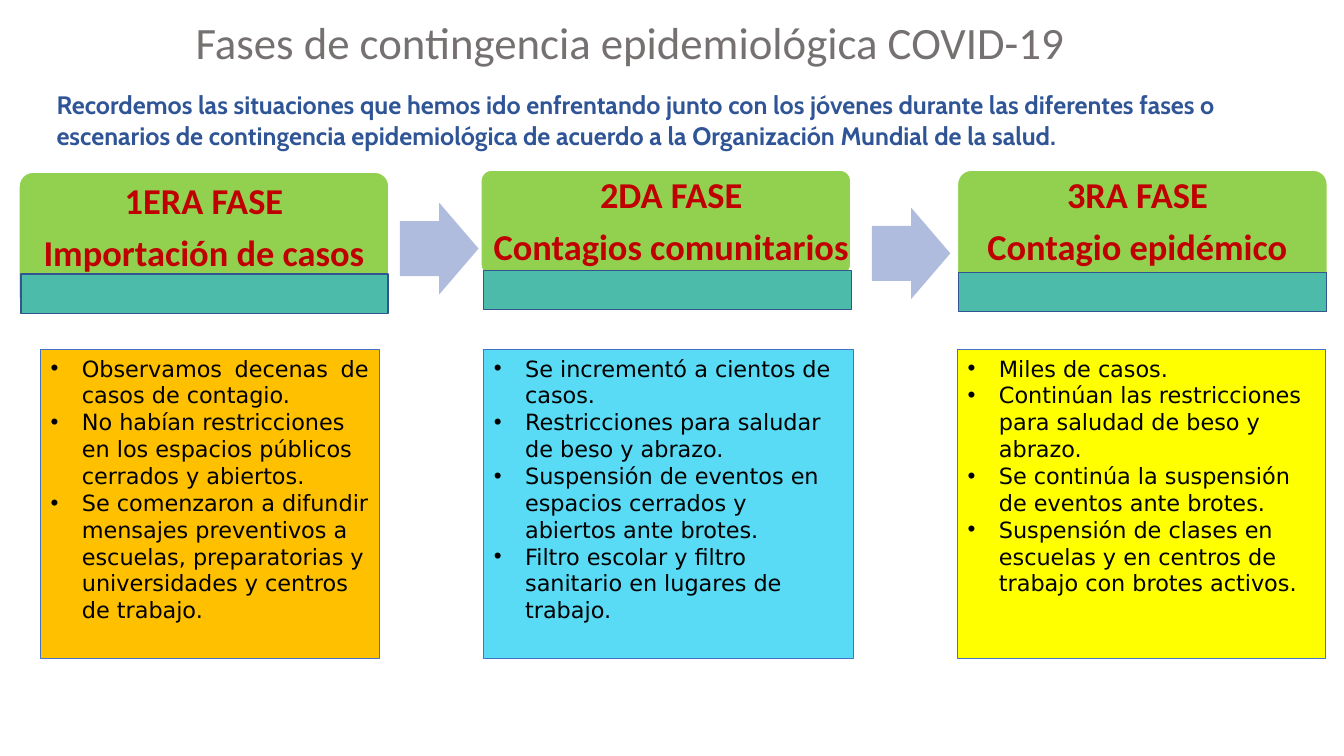
from dataclasses import dataclass

import pptx
import pptx.dml.color
import pptx.enum.shapes
import pptx.enum.text
import pptx.oxml.ns
import pptx.util
from lxml import etree

Cm = pptx.util.Cm
Pt = pptx.util.Pt
Kind = pptx.enum.shapes.MSO_SHAPE
Align = pptx.enum.text.PP_ALIGN
Anchor = pptx.enum.text.MSO_ANCHOR
Box = tuple[float, float, float, float]

HUES = {
    "green": "92D050", "white": "FFFFFF", "red": "C00000", "black": "000000",
    "arrow": "B0BCDE", "teal": "4DBBA9", "navy": "325491", "edge": "4472C4",
    "gray": "767171", "blue": "2F5597",
    "orange": "FFC000", "cyan": "59DBF5", "yellow": "FFFF00",
}


@dataclass
class Phase:
    head: str
    card: Box
    label: Box
    bar: Box
    panel: Box
    slot: int
    fill: str
    items: list[str]


PHASES = [
    Phase("1ERA FASE\nImportación de casos",
          (0.48, 4.34, 9.32, 3.51), (0.56, 4.19, 9.17, 3.15),
          (0.53, 6.91, 9.25, 0.99), (1.02, 8.81, 8.53, 7.77), 2, "orange",
          ["Observamos decenas de casos de contagio.",
           "No habían restricciones en los espacios públicos cerrados y abiertos.",
           "Se comenzaron a difundir mensajes preventivos a escuelas, "
           "preparatorias y universidades y centros de trabajo."]),
    Phase("2DA FASE\nContagios comunitarios",
          (12.12, 4.29, 9.32, 2.64), (12.07, 4.37, 9.7, 2.49),
          (12.19, 6.81, 9.27, 0.99), (12.19, 8.81, 9.32, 7.77), 3, "cyan",
          ["Se incrementó a cientos de casos.",
           "Restricciones para saludar de beso y abrazo.",
           "Suspensión de eventos en espacios cerrados y abiertos ante brotes.",
           "Filtro escolar y filtro sanitario en lugares de trabajo."]),
    Phase("3RA FASE\nContagio epidémico",
          (24.13, 4.29, 9.32, 3.48), (23.83, 4.88, 9.68, 1.45),
          (24.16, 6.86, 9.27, 0.99), (24.13, 8.81, 9.27, 7.77), 4, "yellow",
          ["Miles de casos.",
           "Continúan las restricciones para saludad de beso y abrazo.",
           "Se continúa la suspensión de eventos ante brotes.",
           "Suspensión de clases en escuelas y en centros de trabajo con "
           "brotes activos."]),
]
ARROWS: list[Box] = [(10.08, 5.11, 1.98, 2.31), (21.97, 5.23, 1.98, 2.31)]
TITLE = "Fases de contingencia epidemiológica COVID-19"
INTRO = ("Recordemos las situaciones que hemos ido enfrentando junto con los "
         "jóvenes durante las diferentes fases o escenarios de contingencia "
         "epidemiológica de acuerdo a la Organización Mundial de la salud.")


def hue(name: str) -> pptx.dml.color.RGBColor:
    return pptx.dml.color.RGBColor.from_string(HUES[name])


def paint(shape, fill: str, edge: str = "", width: float = 1) -> None:
    shape.fill.solid()
    shape.fill.fore_color.rgb = hue(fill)
    if edge:
        shape.line.color.rgb = hue(edge)
        shape.line.width = Pt(width)
    else:
        shape.line.fill.background()


def place(shape, box: Box) -> None:
    shape.left, shape.top, shape.width, shape.height = map(Cm, box)


def block(slide, kind, box: Box, fill: str, edge: str = "",
          bends: tuple[float, ...] = ()) -> None:
    shape = slide.shapes.add_shape(kind, *map(Cm, box))
    shape.shadow.inherit = False
    for spot, bend in enumerate(bends):
        shape.adjustments[spot] = bend
    paint(shape, fill, edge)


def write(shape, text: str, face: str, size: float, tint: str, bold: bool,
          align=Align.LEFT, anchor=Anchor.TOP, pitch: float = 1,
          after: float = 0) -> None:
    frame = shape.text_frame
    frame.text = text
    frame.word_wrap = True
    frame.auto_size = pptx.enum.text.MSO_AUTO_SIZE.NONE
    frame.vertical_anchor = anchor
    for para in frame.paragraphs:
        para.alignment = align
        para.line_spacing = pitch
        para.space_before = Pt(0)
        para.space_after = Pt(after)
        for run in para.runs:
            run.font.name = face
            run.font.size = Pt(size)
            run.font.bold = bold
            run.font.color.rgb = hue(tint)


def mark(para, sign: str = "") -> None:
    props = para._p.get_or_add_pPr()
    inset = Cm(0.79) if sign else 0
    props.set("marL", str(inset))
    props.set("indent", str(-inset))
    qn = pptx.oxml.ns.qn
    if sign:
        etree.SubElement(props, qn("a:buFont"), typeface="Arial")
        etree.SubElement(props, qn("a:buChar"), char=sign)
    else:
        etree.SubElement(props, qn("a:buNone"))


def draw(slide, phase: Phase) -> None:
    block(slide, Kind.ROUNDED_RECTANGLE, phase.card, "green", "white", (0.1,))
    label = slide.shapes.add_textbox(*map(Cm, phase.label))
    write(label, phase.head, "Calibri", 26, "red", True, Align.CENTER,
          Anchor.MIDDLE, 0.9, 9)
    frame = label.text_frame
    frame.margin_left = frame.margin_right = Cm(0.28)
    frame.margin_top = frame.margin_bottom = Cm(0.28)
    block(slide, Kind.RECTANGLE, phase.bar, "teal", "navy")
    panel = slide.placeholders[phase.slot]
    place(panel, phase.panel)
    paint(panel, phase.fill, "edge", 0.5)
    write(panel, "\n".join(phase.items), "DejaVu Sans", 16, "black", False)
    for para in panel.text_frame.paragraphs:
        mark(para, "•")


def main() -> None:
    deck = pptx.Presentation()
    deck.slide_width, deck.slide_height = Cm(33.87), Cm(19.05)
    slide = deck.slides.add_slide(deck.slide_layouts[4])
    title = slide.shapes.title
    place(title, (4.62, 0.25, 22.53, 1.63))
    write(title, TITLE, "Calibri", 32, "gray", False, Align.CENTER)
    intro = slide.placeholders[1]
    place(intro, (1.17, 2.13, 32.26, 1.8))
    write(intro, INTRO, "Cabin", 18, "blue", True)
    mark(intro.text_frame.paragraphs[0])
    for phase in PHASES:
        draw(slide, phase)
    first = slide.placeholders[PHASES[0].slot].text_frame.paragraphs[0]
    first.alignment = Align.JUSTIFY
    for box in ARROWS:
        block(slide, Kind.RIGHT_ARROW, box, "arrow", bends=(0.6, 0.5))
    deck.save("out.pptx")


if __name__ == "__main__":
    main()
